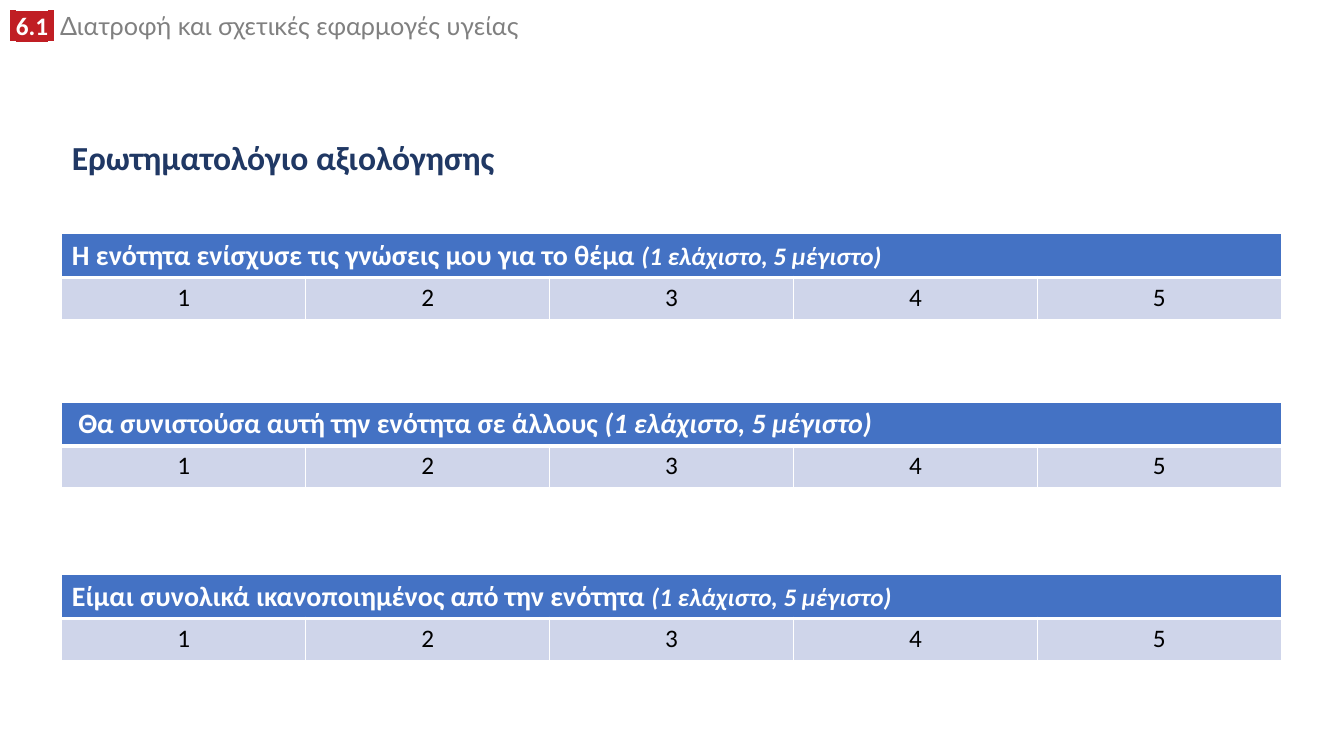
from lxml import etree
from pptx import Presentation
from pptx.dml.color import RGBColor
from pptx.enum.text import MSO_ANCHOR, PP_ALIGN
from pptx.oxml.ns import qn
from pptx.util import Cm, Pt

MIDDLE, TOP = MSO_ANCHOR.MIDDLE, MSO_ANCHOR.TOP
LEFT, CENTER = PP_ALIGN.LEFT, PP_ALIGN.CENTER

# Content
SECTION = "6.1"
MODULE = " Διατροφή και σχετικές εφαρμογές υγείας"
TITLE = "Ερωτηματολόγιο αξιολόγησης"
SCALE = "(1 ελάχιστο, 5 μέγιστο)"
SCORES = ["1", "2", "3", "4", "5"]
QUESTIONS = [  # table top in cm, question, style of the scale note
    (5.89, "Η ενότητα ενίσχυσε τις γνώσεις μου για το θέμα ", "note"),
    (10.13, " Θα συνιστούσα αυτή την ενότητα σε άλλους ", "large_note"),
    (14.48, "Είμαι συνολικά ικανοποιημένος από την ενότητα ", "note"),
]

# Theme: colours, type sizes and text styles
COLORS = {"white": "FFFFFF", "red": "C01E24", "gray": "808080", "navy": "203864",
          "blue": "4472C4", "pale": "CFD5EA", "black": "000000"}
BODY, LARGE, HEADING = Pt(18), Pt(20), Pt(24)
THEME = {
    "pad": ("white", {"name": "Lato", "size": BODY, "bold": True}),
    "number": ("white", {"name": "Calibri", "size": BODY, "bold": True}),
    "module": ("gray", {"name": "Lato", "size": BODY, "bold": False}),
    "title": ("navy", {"name": "Calibri", "size": HEADING, "bold": True}),
    "question": ("white", {"name": "Calibri", "size": LARGE, "bold": True}),
    "note": ("white", {"name": "Calibri", "size": BODY, "bold": True, "italic": True}),
    "large_note": ("white", {"name": "Calibri", "size": LARGE, "bold": True, "italic": True}),
    "score": ("black", {"name": "Calibri", "size": BODY, "bold": False, "italic": False}),
}

# Layout in cm
MARGIN, WIDTH, ROW_HEIGHT = 1.56, 30.73, 1.06


def rgb(color):
    return RGBColor.from_string(COLORS[color])


def add_run(p, text, style, highlight=None):
    color, formats = THEME[style]
    r = p.add_run()
    r.text = text
    for name, value in formats.items():
        setattr(r.font, name, value)
    r.font.color.rgb = rgb(color)
    if highlight:
        mark = etree.Element(qn("a:highlight"))
        etree.SubElement(mark, qn("a:srgbClr"), val=COLORS[highlight])
        r.font.fill._xPr.find(qn("a:solidFill")).addnext(mark)


def add_text(s, box, spacing, anchor):
    tf = s.shapes.add_textbox(*map(Cm, box)).text_frame
    tf.word_wrap, tf.vertical_anchor = True, anchor
    p = tf.paragraphs[0]
    p.line_spacing = spacing
    return p


def style_cell(cell, fill, top, bottom):
    cell.fill.solid()
    cell.fill.fore_color.rgb = rgb(fill)
    borders = {"a:lnL": 1, "a:lnR": 1, "a:lnT": top, "a:lnB": bottom}
    for i, (tag, width) in enumerate(borders.items()):
        ln = etree.Element(qn(tag), w=str(Pt(width)))
        color = etree.SubElement(ln, qn("a:solidFill"))
        etree.SubElement(color, qn("a:srgbClr"), val=COLORS["white"])
        cell._tc.get_or_add_tcPr().insert(i, ln)


def add_question(s, top, question, note_style):
    n = len(SCORES)
    table = s.shapes.add_table(2, n, Cm(MARGIN), Cm(top), Cm(WIDTH), Cm(2 * ROW_HEIGHT)).table
    for col, score in enumerate(SCORES):
        style_cell(table.cell(0, col), "blue", 1, 3)
        cell = table.cell(1, col)
        style_cell(cell, "pale", 3, 1)
        p = cell.text_frame.paragraphs[0]
        p.alignment = CENTER
        add_run(p, score, "score")
    header = table.cell(0, 0)
    header.merge(table.cell(0, n - 1))
    p = header.text_frame.paragraphs[0]
    p.alignment = LEFT
    add_run(p, question, "question")
    add_run(p, SCALE, note_style)


prs = Presentation()
prs.slide_width, prs.slide_height = Cm(33.87), Cm(19.05)
s = prs.slides.add_slide(prs.slide_layouts[6])

# Module header
p = add_text(s, (0, 0.28, 24.18, 0.89), 0.8, TOP)
for text, style in [(" ", "pad"), (SECTION, "number"), (" ", "pad")]:
    add_run(p, text, style, "red")
add_run(p, MODULE, "module")

# Title
p = add_text(s, (MARGIN, 3.0, WIDTH, 2.03), 0.9, MIDDLE)
add_run(p, TITLE, "title")

# Rating tables
for top, question, note_style in QUESTIONS:
    add_question(s, top, question, note_style)

prs.save("out.pptx")
